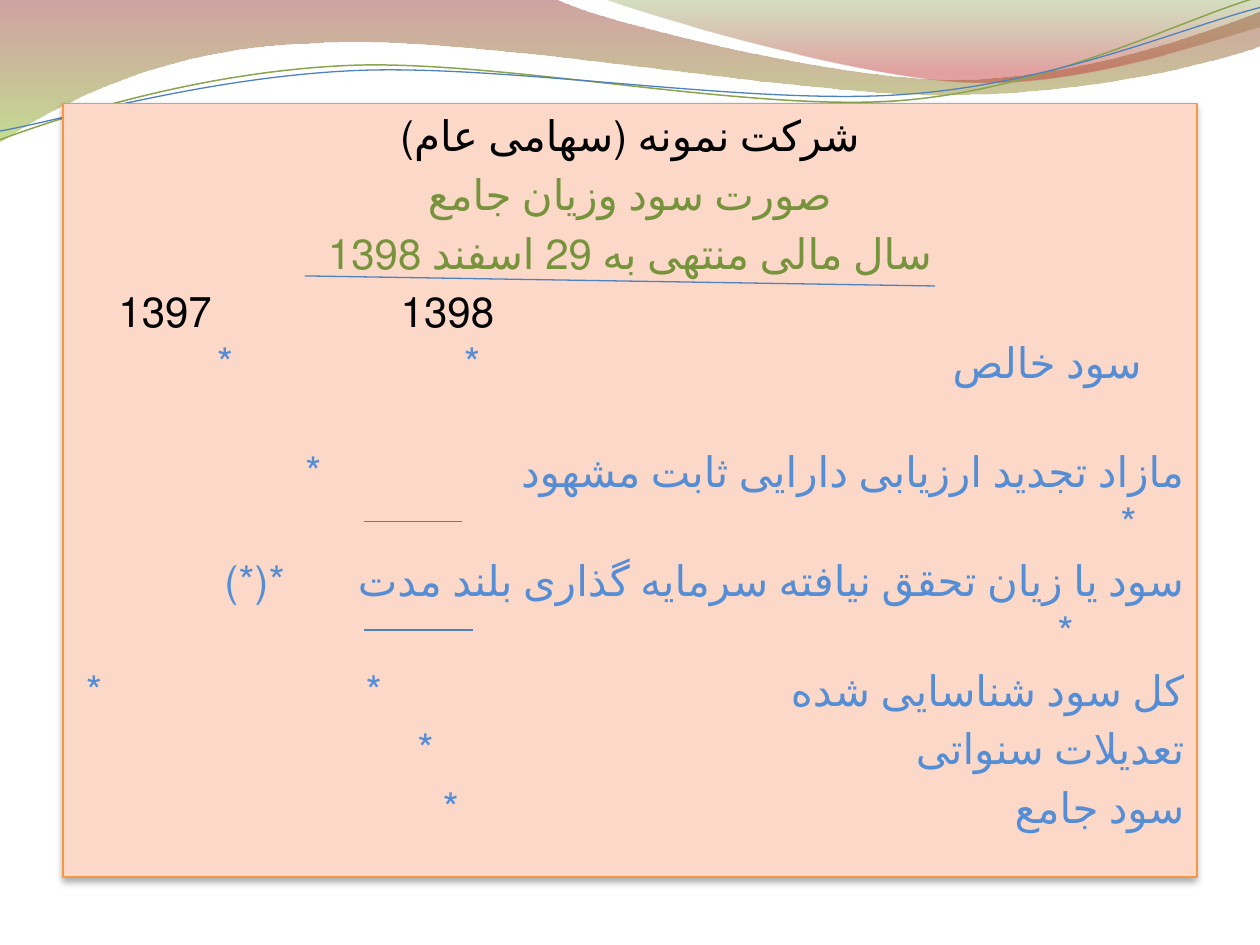
from dataclasses import dataclass

import pptx
import pptx.dml.color
import pptx.enum.lang
import pptx.enum.shapes
import pptx.enum.text
import pptx.oxml.ns
import pptx.util
from lxml import etree

Inches = pptx.util.Inches
Pt = pptx.util.Pt
qn = pptx.oxml.ns.qn
ALIGN = pptx.enum.text.PP_ALIGN

COLORS = {
    "panel": "FBD8C8", "border": "F79646", "black": "000000",
    "heading": "77933C", "entry": "558ED5", "blue": "4F81BD", "green": "89A54F",
    "wine": "973330", "lime": "95C238", "olive": "769537", "red": "BE3330",
}
FONT = {"name": "Cambria", "size": Pt(24),
        "language_id": pptx.enum.lang.MSO_LANGUAGE_ID.FARSI}


@dataclass
class Stop:
    position: float
    color: str
    opacity: int


@dataclass
class Wave:
    """Pieces hold one point for a straight side, three for a Bezier curve."""
    start: tuple
    pieces: list
    stops: tuple = ()
    color: str = ""
    width: float = 0


@dataclass
class Entry:
    """Lines of (text, colour); tabs are inches from the right text edge."""
    lines: list
    tabs: tuple = ()
    align: object = ALIGN.RIGHT
    space_after: float = 0


@dataclass
class Rule:
    start: tuple
    end: tuple


WAVES = [
    Wave((0, 0), [
        [(4.4, -0.01)],
        [(4.76, 0.17), (6.64, 0.63), (7.58, 0.63)],
        [(8.53, 0.63), (9.58, 0.26), (10, 0.09)],
        [(10.01, 0.36)],
        [(9.83, 0.44), (8.7, 0.76), (7.46, 0.75)],
        [(6.22, 0.75), (3.82, 0.28), (2.57, 0.34)],
        [(1.29, 0.36), (0.46, 0.83), (-0.01, 1.13)],
    ], stops=(Stop(0, "wine", 45), Stop(1, "lime", 55))),
    Wave((4.79, -0.01), [
        [(5.09, 0.11), (6.82, 0.62), (7.69, 0.65)],
        [(8.56, 0.69), (9.61, 0.32), (10, 0.21)],
        [(10, 0)],
    ], stops=(Stop(0, "olive", 30), Stop(0.8, "red", 45))),
    Wave((0, 1.11), [
        [(0.48, 0.93), (1.58, 0.57), (2.77, 0.52)],
        [(3.95, 0.47), (5.93, 0.89), (7.13, 0.8)],
        [(8.33, 0.71), (9.38, 0.15), (9.98, -0.02)],
    ], color="green", width=0.85),
    Wave((0, 1.04), [
        [(0.47, 0.96), (1.64, 0.61), (2.83, 0.56)],
        [(4.03, 0.51), (5.97, 0.84), (7.17, 0.75)],
        [(8.36, 0.67), (9.41, 0.21), (10, 0.06)],
    ], color="blue", width=0.75),
]

ENTRIES = [
    Entry([("شرکت نمونه (سهامی عام)", "black")], align=ALIGN.CENTER),
    Entry([("صورت سود وزیان جامع", "heading")], align=ALIGN.CENTER),
    Entry([("سال مالی منتهی به 29 اسفند 1398", "heading")], align=ALIGN.CENTER),
    Entry([("\t\t1398\t\t1397", "black"), ("\tسود خالص\t\t*\t*", "entry")],
          tabs=(0.34, 5.48, 5.59, 7.55, 7.72), space_after=29),
    Entry([("مازاد تجدید ارزیابی دارایی ثابت مشهود\t*", "entry"),
           ("\t*", "entry")], tabs=(0.38, 6.85)),
    Entry([("سود یا زیان تحقق نیافته سرمایه گذاری بلند مدت\t*(*)", "entry"),
           ("\t*", "entry")], tabs=(0.88, 7.14)),
    Entry([("کل سود شناسایی شده\t*\t*", "entry")], tabs=(6.37, 8.59)),
    Entry([("تعدیلات سنواتی\t*", "entry")], tabs=(5.96,)),
    Entry([("سود جامع\t*", "entry")], tabs=(5.76,)),
]

RULES = [
    Rule((7.42, 2.27), (2.42, 2.19)),
    Rule((3.67, 4.14), (2.89, 4.14)),
    Rule((3.75, 5), (2.89, 5)),
]


def rgb(name: str) -> pptx.dml.color.RGBColor:
    return pptx.dml.color.RGBColor.from_string(COLORS[name])


def set_line(line, color: str, width: float) -> None:
    line.color.rgb = rgb(color)
    line.width = Pt(width)


def add_opacity(color_element, percent: int) -> None:
    etree.SubElement(color_element, qn("a:alpha"), val=str(percent * 1000))


def bend_sides(shape, pieces: list) -> None:
    """Turn each run of three straight segments into one cubic curve."""
    segments = iter(list(shape.element.iter(qn("a:lnTo"))))
    for piece in pieces:
        group = [next(segments) for _ in piece]
        if len(group) == 1:
            continue
        curve = etree.Element(qn("a:cubicBezTo"))
        group[0].addprevious(curve)
        for segment in group:
            curve.append(segment[0])
            segment.getparent().remove(segment)


def draw_wave(page, wave: Wave) -> None:
    points = [wave.start] + [point for piece in wave.pieces for point in piece]
    corners = [(Inches(x), Inches(y)) for x, y in points]
    builder = page.shapes.build_freeform(*corners[0], scale=1.0)
    builder.add_line_segments(corners[1:], close=bool(wave.stops))
    shape = builder.convert_to_shape()
    bend_sides(shape, wave.pieces)
    shape.shadow.inherit = False
    if not wave.stops:
        shape.fill.background()
        set_line(shape.line, wave.color, wave.width)
        return
    shape.line.fill.background()
    shape.fill.gradient()
    shape.fill.gradient_angle = 270
    for target, stop in zip(shape.fill.gradient_stops, wave.stops):
        target.color.rgb = rgb(stop.color)
        target.position = stop.position
    for element, stop in zip(list(shape.element.iter(qn("a:srgbClr"))), wave.stops):
        add_opacity(element, stop.opacity)


def draw_panel(page):
    box = page.shapes.add_shape(pptx.enum.shapes.MSO_SHAPE.RECTANGLE,
                                Inches(0.5), Inches(0.82), Inches(9), Inches(6.14))
    box.fill.solid()
    box.fill.fore_color.rgb = rgb("panel")
    set_line(box.line, "border", 0.75)
    # Soft shadow below the panel
    box.shadow.inherit = False
    effects = next(box.element.iter(qn("a:effectLst")))
    shadow = etree.SubElement(effects, qn("a:outerShdw"), blurRad=str(Pt(4)),
                              dist=str(Pt(2)), dir="5400000", rotWithShape="0")
    add_opacity(etree.SubElement(shadow, qn("a:srgbClr"), val=COLORS["black"]), 35)
    box.text_frame.word_wrap = True
    box.text_frame.vertical_anchor = pptx.enum.text.MSO_ANCHOR.TOP
    return box


def write_entry(para, entry: Entry) -> None:
    layout = {"alignment": entry.align, "space_before": Pt(4.8),
              "space_after": Pt(entry.space_after)}
    for name, value in layout.items():
        setattr(para, name, value)
    properties = para._p.get_or_add_pPr()
    properties.set("rtl", "1")
    if entry.tabs:
        # In a right-to-left line, text starts at a right tab
        tab_list = etree.SubElement(properties, qn("a:tabLst"))
        for position in entry.tabs:
            etree.SubElement(tab_list, qn("a:tab"), pos=str(Inches(position)), algn="r")
    for index, (text, color) in enumerate(entry.lines):
        if index:
            para.add_line_break()
        span = para.add_run()
        span.text = text
        span.font.color.rgb = rgb(color)
        for name, value in FONT.items():
            setattr(span.font, name, value)


def draw_rule(page, rule: Rule) -> None:
    ends = [Inches(value) for value in (*rule.start, *rule.end)]
    connector = page.shapes.add_connector(pptx.enum.shapes.MSO_CONNECTOR.STRAIGHT, *ends)
    set_line(connector.line, "blue", 0.75)
    etree.SubElement(connector.element.find(qn("p:spPr")), qn("a:effectLst"))


def main() -> None:
    deck = pptx.Presentation()
    deck.slide_width, deck.slide_height = Inches(10), Inches(7.5)
    page = deck.slides.add_slide(deck.slide_layouts[6])

    # Decorative waves along the top
    for wave in WAVES:
        draw_wave(page, wave)

    # Statement panel
    frame = draw_panel(page).text_frame
    for index, entry in enumerate(ENTRIES):
        write_entry(frame.add_paragraph() if index else frame.paragraphs[0], entry)

    # Underlines for the heading and subtotals
    for rule in RULES:
        draw_rule(page, rule)

    deck.save("out.pptx")


if __name__ == "__main__":
    main()
